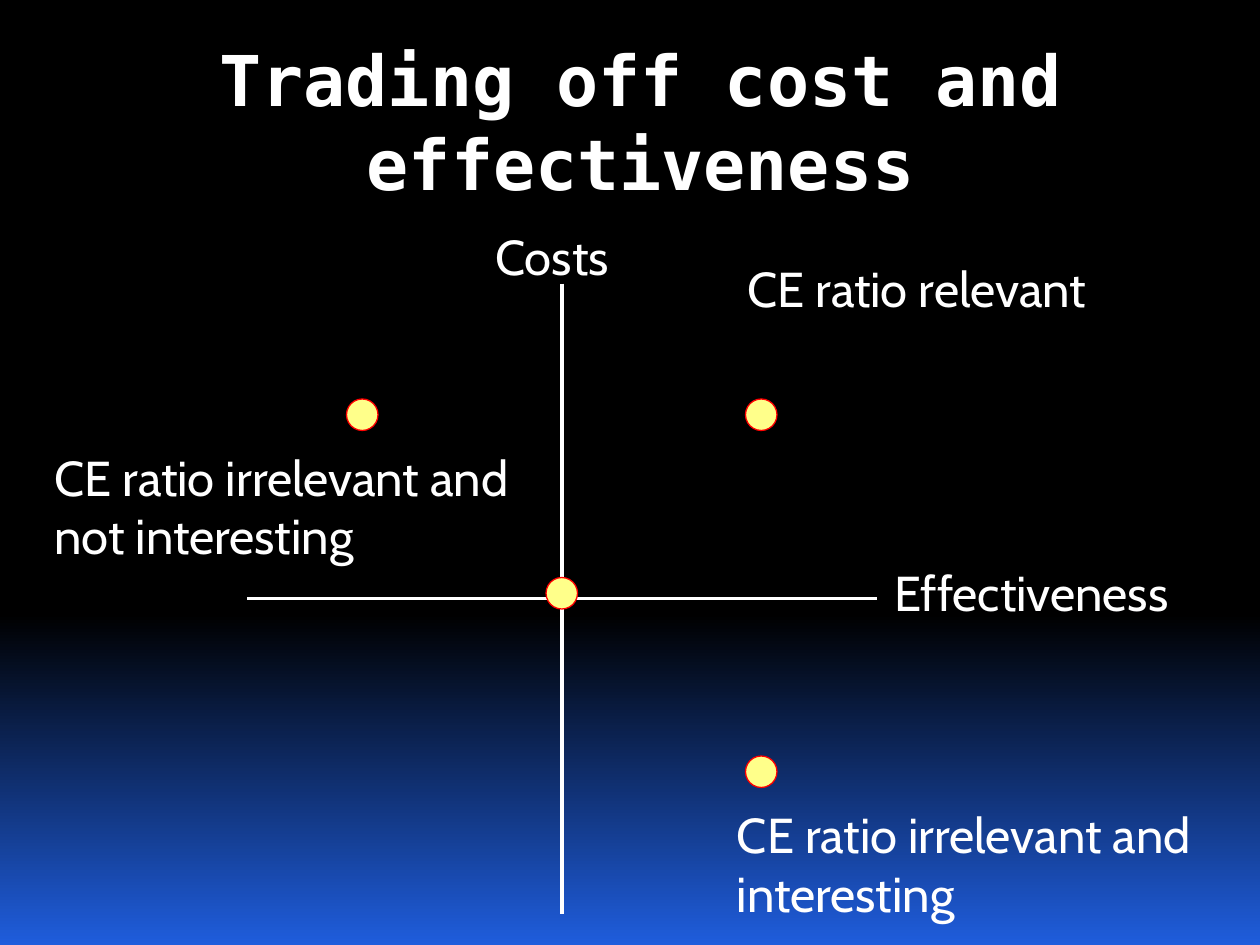
from lxml.etree import SubElement
from pptx import Presentation
from pptx.dml.color import RGBColor
from pptx.enum.shapes import MSO_CONNECTOR, MSO_SHAPE
from pptx.enum.text import MSO_ANCHOR, MSO_AUTO_SIZE, PP_ALIGN
from pptx.oxml.ns import qn
from pptx.util import Pt

WHITE = "FFFFFF"
CENTRE_X, AXIS_Y, DOT_Y = 321, 342, 339
AXIS_REACH = 180
DOT_SIZE, DOT_STEP_X, DOT_STEP_Y = 18, 114, 102


def paint(color, value):
    """Set a colour from a hex string."""
    color.rgb = RGBColor.from_string(value)


def add_span(para, text, size, font, bold=False):
    """Add a white run to a paragraph."""
    span = para.add_run()
    span.text = text
    span.font.size = Pt(size)
    span.font.name = font
    span.font.bold = bold
    paint(span.font.color, WHITE)


def set_background(page):
    """Fill the page with black fading to blue at the bottom."""
    fill = page.background.fill
    fill.gradient()
    fill.gradient_angle = 270
    stops = ((0.65, "000000"), (1, "1F5DDC"))
    for stop, (position, value) in zip(fill.gradient_stops, stops):
        stop.position = position
        paint(stop.color, value)


def set_title(page, text):
    """Place and format the title placeholder."""
    title = page.shapes.title
    title.left, title.top, title.width, title.height = Pt(60), Pt(24), Pt(612), Pt(90)
    frame = title.text_frame
    frame.word_wrap = True
    frame.auto_size = MSO_AUTO_SIZE.NONE
    frame.vertical_anchor = MSO_ANCHOR.MIDDLE
    para = frame.paragraphs[0]
    para.alignment = PP_ALIGN.CENTER
    add_span(para, text, 40, "DejaVu Sans Mono", True)


def add_axis(page, x1, y1, x2, y2):
    """Draw a white axis line."""
    axis = page.shapes.add_connector(
        MSO_CONNECTOR.STRAIGHT, Pt(x1), Pt(y1), Pt(x2), Pt(y2))
    axis.line.width = Pt(2.25)
    paint(axis.line.color, WHITE)
    SubElement(axis.element.spPr, qn("a:effectLst"))


def add_dot(page, column, row):
    """Draw a dot at a grid position counted from the origin."""
    left = CENTRE_X + column * DOT_STEP_X - DOT_SIZE / 2
    top = DOT_Y + row * DOT_STEP_Y - DOT_SIZE / 2
    dot = page.shapes.add_shape(
        MSO_SHAPE.OVAL, Pt(left), Pt(top), Pt(DOT_SIZE), Pt(DOT_SIZE))
    dot.shadow.inherit = False
    dot.fill.solid()
    paint(dot.fill.fore_color, "FFFF8A")
    dot.line.width = Pt(0.75)
    paint(dot.line.color, "FF0000")


def add_label(page, text, left, top, width, height):
    """Add a wrapped text label."""
    box = page.shapes.add_textbox(Pt(left), Pt(top), Pt(width), Pt(height))
    frame = box.text_frame
    frame.word_wrap = True
    frame.auto_size = MSO_AUTO_SIZE.SHAPE_TO_FIT_TEXT
    add_span(frame.paragraphs[0], text, 28, "Cabin")


def main():
    """Build the cost and effectiveness slide."""
    deck = Presentation()
    deck.slide_width, deck.slide_height = Pt(720), Pt(540)
    page = deck.slides.add_slide(deck.slide_layouts[5])
    set_background(page)
    set_title(page, "Trading off cost and effectiveness")
    add_axis(page, CENTRE_X, AXIS_Y - AXIS_REACH, CENTRE_X, AXIS_Y + AXIS_REACH)
    add_axis(page, CENTRE_X + AXIS_REACH, AXIS_Y, CENTRE_X - AXIS_REACH, AXIS_Y)
    add_label(page, "Costs", 276, 126, 90, 41)
    add_label(page, "Effectiveness", 504, 318, 186, 41)
    for column, row in ((0, 0), (-1, -1), (1, 1), (1, -1)):
        add_dot(page, column, row)
    add_label(page, "CE ratio irrelevant and interesting", 414, 456, 276, 75)
    add_label(page, "CE ratio irrelevant and not interesting", 24, 252, 276, 75)
    add_label(page, "CE ratio relevant", 420, 144, 276, 41)
    deck.save("out.pptx")


if __name__ == "__main__":
    main()
